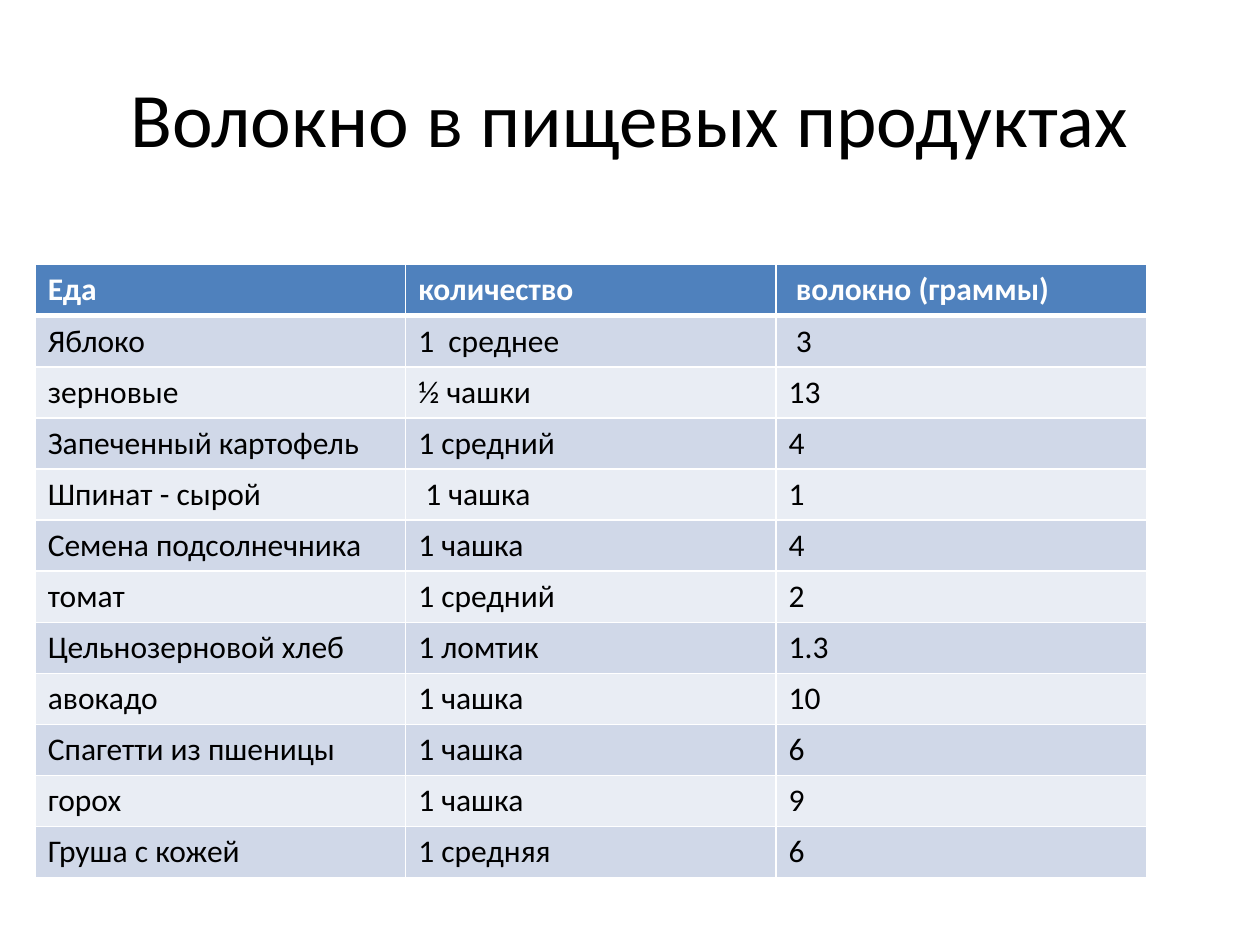
from lxml import etree
from pptx import Presentation
from pptx import util as u
from pptx.dml.color import RGBColor
from pptx.enum import text
from pptx.oxml.ns import qn

COLORS = {
    "header": "4F81BD",
    "odd": "D0D8E8",
    "even": "E9EDF4",
    "white": "FFFFFF",
    "black": "000000",
}
FONT = "Calibri"
ROWS = [
    ("Еда", "количество", " волокно (граммы)"),
    ("Яблоко", "1  среднее", " 3"),
    ("зерновые", "½ чашки", "13"),
    ("Запеченный картофель", "1 средний", "4"),
    ("Шпинат - сырой", " 1 чашка", "1"),
    ("Семена подсолнечника", "1 чашка", "4"),
    ("томат", "1 средний", "2"),
    ("Цельнозерновой хлеб", "1 ломтик", "1.3"),
    ("авокадо", "1 чашка", "10"),
    ("Спагетти из пшеницы", "1 чашка", "6"),
    ("горох", "1 чашка", "9"),
    ("Груша с кожей", "1 средняя", "6"),
]


def rgb(name):
    """Return the named colour."""
    return RGBColor.from_string(COLORS[name])


def format_runs(p, size, color, bold=False):
    """Format every run of a paragraph."""
    for r in p.runs:
        r.font.name = FONT
        r.font.size = u.Pt(size)
        r.font.bold = bold
        r.font.color.rgb = rgb(color)


def set_borders(cell, top, bottom):
    """Draw white cell borders, with top and bottom widths in points."""
    tcPr = cell._tc.get_or_add_tcPr()
    for tag, width in (("a:lnL", 1), ("a:lnR", 1), ("a:lnT", top), ("a:lnB", bottom)):
        ln = etree.SubElement(tcPr, qn(tag), w=str(u.Pt(width)))
        fill = etree.SubElement(ln, qn("a:solidFill"))
        etree.SubElement(fill, qn("a:srgbClr"), val=COLORS["white"])


def add_title(slide, left, top, width, height):
    """Place and format the slide title in the given box."""
    sp = slide.shapes.title
    sp.left, sp.top, sp.width, sp.height = left, top, width, height
    tf = sp.text_frame
    tf.text = "Волокно в пищевых продуктах"
    tf.vertical_anchor = text.MSO_ANCHOR.MIDDLE
    p = tf.paragraphs[0]
    p.alignment = text.PP_ALIGN.CENTER
    format_runs(p, 44, "black")


def add_fiber_table(slide, left, top, width, height):
    """Fill the given box with the table of foods and their fibre."""
    table = slide.shapes.add_table(len(ROWS), len(ROWS[0]), left, top, width, height).table
    for i, values in enumerate(ROWS):
        header = i == 0
        band = "header" if header else "odd" if i % 2 else "even"
        for j, value in enumerate(values):
            cell = table.cell(i, j)
            cell.text = value
            format_runs(cell.text_frame.paragraphs[0], 18, "white" if header else "black", header)
            set_borders(cell, 3 if i == 1 else 1, 3 if header else 1)
            cell.fill.solid()
            cell.fill.fore_color.rgb = rgb(band)


def main():
    """Build and save the slide."""
    prs = Presentation()
    prs.slide_width, prs.slide_height = u.Inches(10), u.Inches(7.5)
    slide = prs.slides.add_slide(prs.slide_layouts[5])
    add_title(slide, u.Inches(0.5), u.Inches(0.3), u.Inches(9), u.Inches(1.25))
    add_fiber_table(slide, u.Inches(0.28), u.Inches(2.1), u.Inches(8.82), u.Inches(4.8))
    prs.save("out.pptx")


if __name__ == "__main__":
    main()
